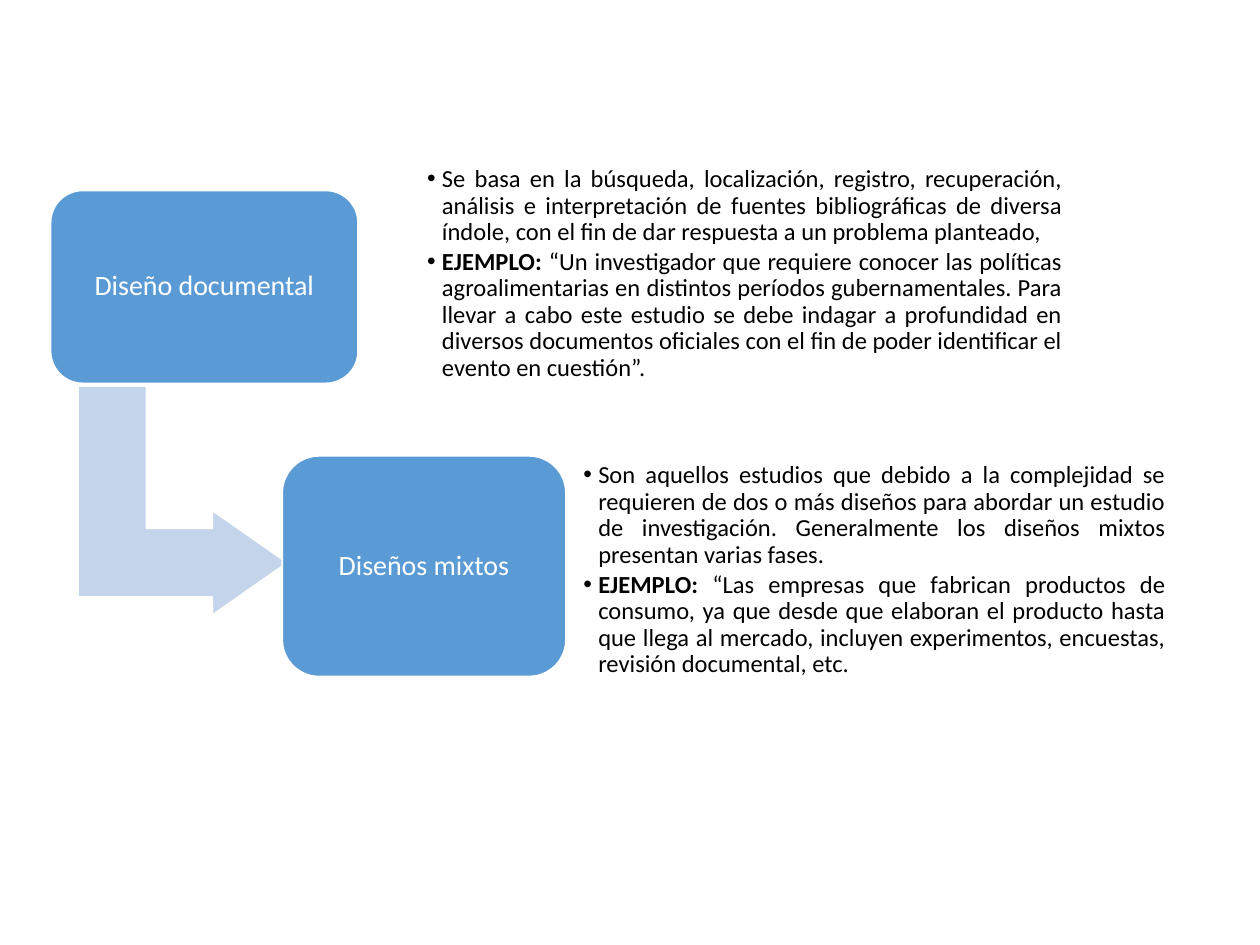
from lxml import etree
from pptx import Presentation
from pptx import util as u
from pptx.dml.color import RGBColor
from pptx.enum import shapes, text
from pptx.oxml.ns import qn

BLUE = RGBColor(0x5B, 0x9B, 0xD5)
PALE = RGBColor(0xC4, 0xD5, 0xEB)
WHITE = RGBColor(0xFF, 0xFF, 0xFF)
BLACK = RGBColor(0, 0, 0)


def put(obj, vals):
    for name, val in vals.items():
        setattr(obj, name, val)


class Deck:
    FONT = "Calibri"
    SIDES = ("left", "top", "width", "height")
    PADS = ("margin_left", "margin_top", "margin_right", "margin_bottom")
    MID = {"word_wrap": True, "vertical_anchor": text.MSO_ANCHOR.MIDDLE,
           "auto_size": text.MSO_AUTO_SIZE.NONE}
    LABEL = {"alignment": text.PP_ALIGN.CENTER, "line_spacing": 0.9}
    ITEM = {"alignment": text.PP_ALIGN.JUSTIFY, "line_spacing": 0.9,
            "space_before": u.Pt(0), "space_after": u.Pt(2)}

    def __init__(self, slide):
        self.slide = slide

    def frame(self, shape, pad):
        box = shape.text_frame
        put(box, self.MID | dict.fromkeys(self.PADS, u.Cm(pad)))
        return box

    def type(self, para, size, color):
        put(para.font, {"name": self.FONT, "size": u.Pt(size)})
        para.font.color.rgb = color

    def shape(self, kind, area, fill, adjs):
        item = self.slide.shapes.add_shape(kind, *map(u.Cm, area))
        item.shadow.inherit = False
        item.fill.solid()
        item.fill.fore_color.rgb = fill
        item.line.color.rgb = WHITE
        item.line.width = u.Pt(1)
        for i, val in enumerate(adjs):
            item.adjustments[i] = val
        return item

    def arrow(self, area):
        item = self.shape(shapes.MSO_SHAPE.BENT_UP_ARROW, area, PALE,
                          (0.328, 0.25, 0.358))
        item.rotation = 90

    def card(self, area, label):
        item = self.shape(shapes.MSO_SHAPE.ROUNDED_RECTANGLE, area, BLUE,
                          (0.167,))
        para = self.frame(item, 0.18).paragraphs[0]
        para.text = label
        put(para, self.LABEL)
        self.type(para, 16, WHITE)

    def list(self, index, area, items):
        body = self.slide.placeholders[index]
        put(body, dict(zip(self.SIDES, map(u.Cm, area))))
        box = self.frame(body, 0.15)
        for i, runs in enumerate(items):
            para = box.add_paragraph() if i else box.paragraphs[0]
            put(para, self.ITEM)
            self.bullet(para)
            self.type(para, 14, BLACK)
            for words, bold in runs:
                run = para.add_run()
                run.text = words
                run.font.bold = bold

    def bullet(self, para):
        props = para._p.get_or_add_pPr()
        props.set("marL", str(u.Cm(0.3)))
        props.set("indent", str(-u.Cm(0.3)))
        etree.SubElement(props, qn("a:buChar"), char="•")


def main():
    show = Presentation()
    show.slide_width, show.slide_height = u.Cm(25.4), u.Cm(19.05)
    slide = show.slides.add_slide(show.slide_layouts[3])
    title = slide.shapes.title.element
    title.getparent().remove(title)
    deck = Deck(slide)

    # Arrow from the first design to the second
    deck.arrow((1.37, 7.98, 4.62, 4.22))

    # Documentary design
    deck.card((1.02, 3.84, 6.2, 3.89), "Diseño documental")
    deck.list(1, (8.46, 3.33, 13.11, 4.39), [
        [("Se basa en la búsqueda, localización, registro, recuperación, "
          "análisis e interpretación de fuentes bibliográficas de diversa "
          "índole, con el fin de dar respuesta a un problema planteado,",
          False)],
        [("EJEMPLO: ", True),
         ("“Un investigador que requiere conocer las políticas "
          "agroalimentarias en distintos períodos gubernamentales. Para "
          "llevar a cabo este estudio se debe indagar a profundidad en "
          "diversos documentos oficiales con el fin de poder identificar "
          "el evento en cuestión”.", False)],
    ])

    # Mixed designs
    deck.card((5.69, 9.19, 5.72, 4.45), "Diseños mixtos")
    deck.list(2, (11.61, 9.3, 12.04, 4.39), [
        [("Son aquellos estudios que debido a la complejidad se requieren "
          "de dos o más diseños para abordar un estudio de investigación. "
          "Generalmente los diseños mixtos presentan varias fases.", False)],
        [("EJEMPLO: ", True),
         ("“Las empresas que fabrican productos de consumo, ya que desde "
          "que elaboran el producto hasta que llega al mercado, incluyen "
          "experimentos, encuestas, revisión documental, etc.", False)],
    ])

    show.save("out.pptx")


if __name__ == "__main__":
    main()
